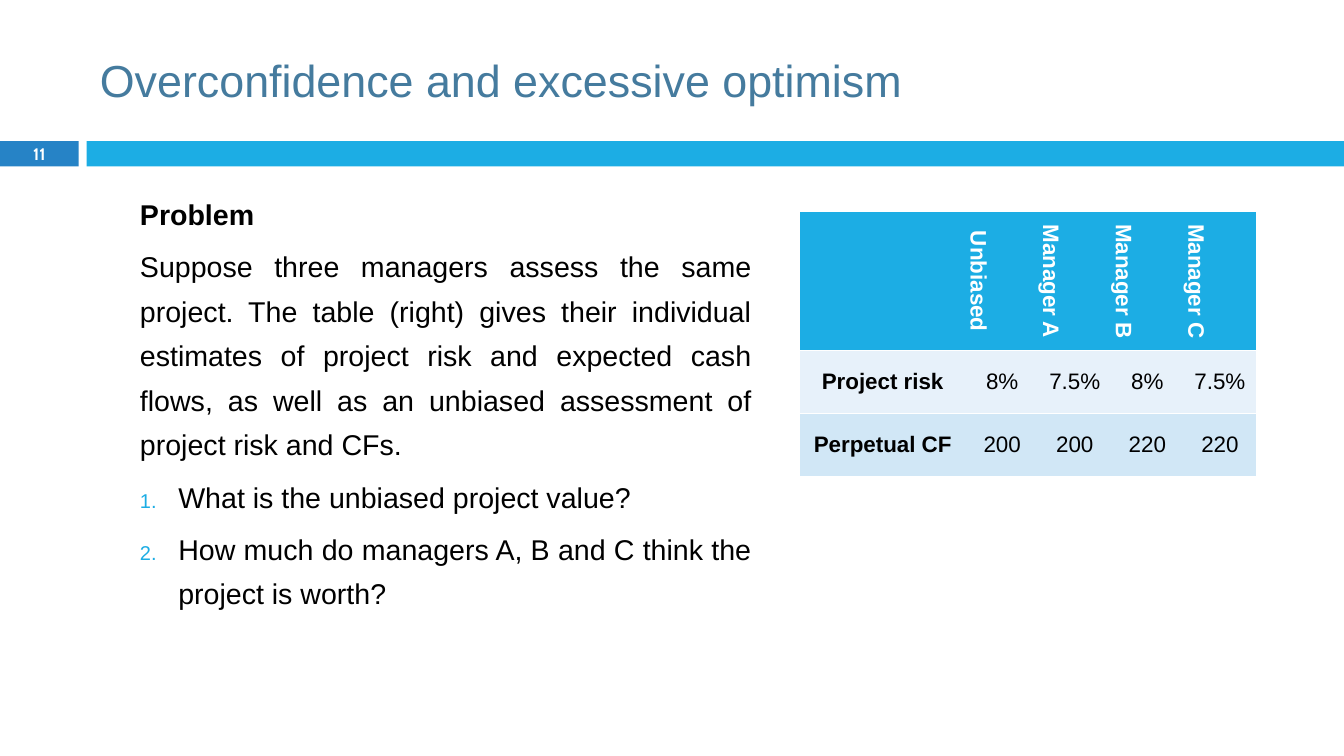
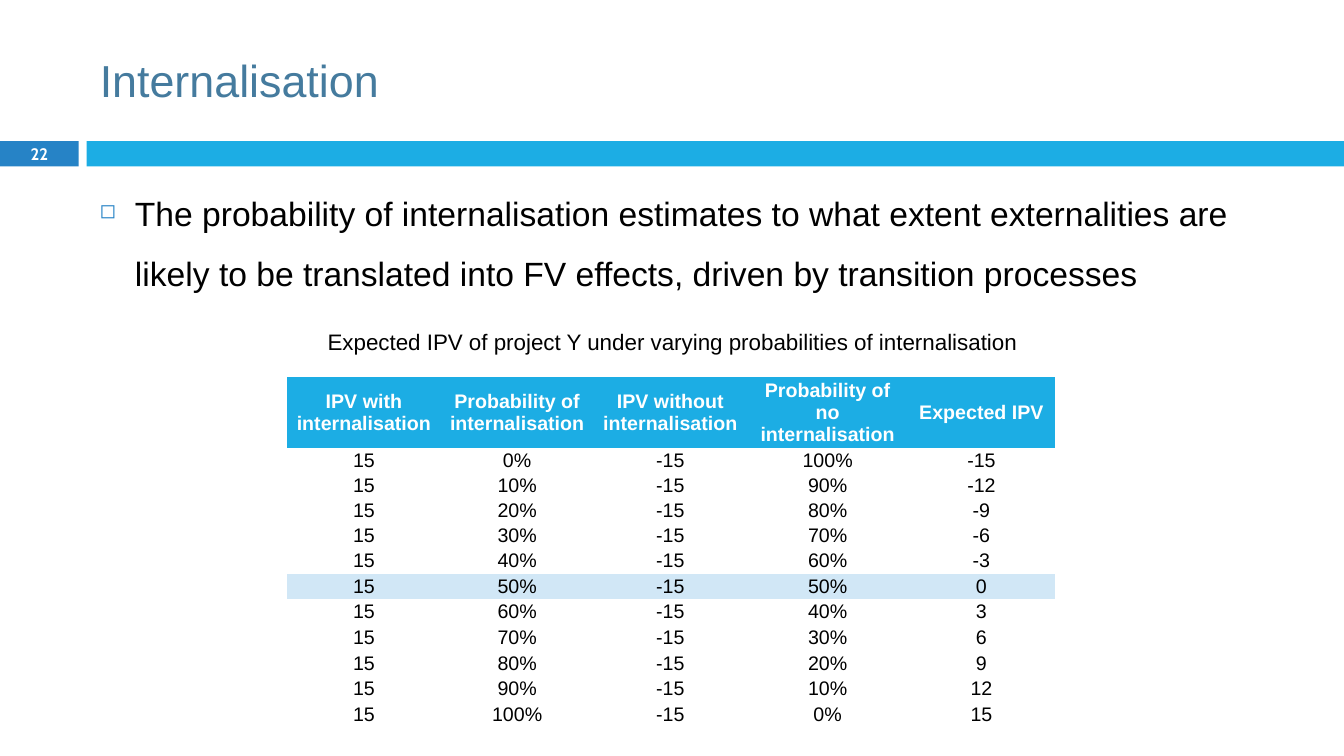
from pptx import Presentation
from pptx.dml.color import RGBColor
from pptx.enum.shapes import MSO_SHAPE
from pptx.enum.text import MSO_ANCHOR, MSO_AUTO_SIZE, PP_ALIGN
from pptx.oxml.ns import qn
from pptx.util import Pt
from lxml.etree import SubElement, Element

PX = 9144
SLIDE_W, SLIDE_H = 1333, 750
NUMBER_W, BAND_X, BAND_Y, BAND_H = 78, 86, 140, 25
TITLE_BOX = (89, 25, 1189, 108)
NO_STYLE = "{2D5ABB26-0587-4C30-8999-92F81FD0307C}"
COLORS = {
    "title": "457B9E", "text": "000000", "white": "FFFFFF",
    "number": "2683C6", "band": "1CADE4", "pale": "E7F1FA", "light": "D1E7F6",
}
LEFT, CENTER, JUSTIFY = PP_ALIGN.LEFT, PP_ALIGN.CENTER, PP_ALIGN.JUSTIFY

PROBLEM = [
    ("Problem", LEFT, True, False),
    ("Suppose three managers assess the same project. The table (right) gives their "
     "individual estimates of project risk and expected cash flows, as well as an "
     "unbiased assessment of project risk and CFs.", JUSTIFY, False, False),
    ("What is the unbiased project value?", JUSTIFY, False, True),
    ("How much do managers A, B and C think the project is worth?", JUSTIFY, False, True),
]
ESTIMATES = [
    ("", "Unbiased", "Manager A", "Manager B", "Manager C"),
    ("Project risk", "8%", "7.5%", "8%", "7.5%"),
    ("Perpetual CF", "200", "200", "220", "220"),
]
INTERNALISATION = (
    "The probability of internalisation estimates to what extent externalities are "
    "likely to be translated into FV effects, driven by transition processes"
)
CAPTION = "Expected IPV of project Y under varying probabilities of internalisation"
IPV_HEADER = (
    "IPV with internalisation", "Probability of internalisation",
    "IPV without internalisation", "Probability of no internalisation", "Expected IPV",
)
IPV_WITH, IPV_WITHOUT = 15, -15
IPV_ROWS = [
    (str(IPV_WITH), f"{chance}%", str(IPV_WITHOUT), f"{100 - chance}%",
     str((IPV_WITH * chance + IPV_WITHOUT * (100 - chance)) // 100))
    for chance in range(0, 101, 10)
]


def px(*lengths):
    return [length * PX for length in lengths]


def rgb(name):
    return RGBColor.from_string(COLORS[name])


def write(paragraph, text, size, color="text", bold=False, align=LEFT, font="Arial"):
    paragraph.alignment = align
    run = paragraph.add_run()
    run.text = text
    run.font.name, run.font.size, run.font.bold = font, Pt(size), bold
    run.font.color.rgb = rgb(color)


def space(paragraph, before, after=0, line=None):
    paragraph.space_before, paragraph.space_after = Pt(before), Pt(after)
    if line:
        paragraph.line_spacing = line


def indent(paragraph, margin, first=0):
    props = paragraph._p.get_or_add_pPr()
    props.set("marL", str(margin * PX))
    props.set("indent", str(first * PX))
    return props


def add_bullet(props, color, percent, tag, **marker):
    SubElement(SubElement(props, qn("a:buClr")), qn("a:srgbClr"), val=COLORS[color])
    SubElement(props, qn("a:buSzPct"), val=str(percent * 1000))
    SubElement(props, qn(tag), **marker)


def add_text_box(slide, box, anchor=MSO_ANCHOR.TOP):
    frame = slide.shapes.add_textbox(*px(*box)).text_frame
    frame.word_wrap, frame.vertical_anchor = True, anchor
    return frame


def add_band(slide, left, width, color):
    band = slide.shapes.add_shape(MSO_SHAPE.RECTANGLE, *px(left, BAND_Y, width, BAND_H))
    band.shadow.inherit = False
    band.fill.solid()
    band.fill.fore_color.rgb = rgb(color)
    band.line.fill.background()
    return band


def start_slide(deck, title, number):
    slide = deck.slides.add_slide(deck.slide_layouts[5])
    number_band = add_band(slide, 0, NUMBER_W, "number")
    add_band(slide, BAND_X, SLIDE_W - BAND_X, "band")
    frame = number_band.text_frame
    frame.vertical_anchor = MSO_ANCHOR.MIDDLE
    frame.margin_top = frame.margin_bottom = 0
    write(frame.paragraphs[0], number, 11.9, "white", True, CENTER, "Cabin")
    heading = slide.shapes.title
    heading.left, heading.top, heading.width, heading.height = px(*TITLE_BOX)
    heading.text_frame.vertical_anchor = MSO_ANCHOR.MIDDLE
    heading.text_frame.auto_size = MSO_AUTO_SIZE.NONE
    write(heading.text_frame.paragraphs[0], title, 32, "title")
    return slide


def add_grid(slide, left, top, columns, heights, rows, fills, size, margin,
             header_space=2, bold_labels=False):
    frame = slide.shapes.add_table(
        len(rows), len(columns), *px(left, top, sum(columns), sum(heights)))
    table = frame.table
    table._tbl.tblPr.find(qn("a:tableStyleId")).text = NO_STYLE
    table.horz_banding = False
    for column, width in zip(table.columns, columns):
        column.width = width * PX
    for r, (row, height) in enumerate(zip(rows, heights)):
        table.rows[r].height = height * PX
        for c, text in enumerate(row):
            cell = table.cell(r, c)
            cell.fill.solid()
            cell.fill.fore_color.rgb = rgb(fills[r])
            cell.vertical_anchor = MSO_ANCHOR.MIDDLE
            cell.margin_left = cell.margin_right = margin * PX
            cell.margin_top = cell.margin_bottom = 0
            if text:
                paragraph = cell.text_frame.paragraphs[0]
                gap = 2 if r else header_space
                space(paragraph, gap, gap)
                write(paragraph, text, size, "text" if r else "white",
                      r == 0 or (bold_labels and c == 0), CENTER)
    return table


def rule_above(cell):
    line = Element(qn("a:lnT"), w=str(Pt(1)))
    SubElement(SubElement(line, qn("a:solidFill")), qn("a:srgbClr"), val=COLORS["white"])
    cell._tc.get_or_add_tcPr().insert(0, line)


def build_overconfidence(deck):
    slide = start_slide(deck, "Overconfidence and excessive optimism", "11")
    body = add_text_box(slide, (89, 180, 666, 447))
    for i, (text, align, bold, numbered) in enumerate(PROBLEM):
        paragraph = body.add_paragraph() if i else body.paragraphs[0]
        space(paragraph, 5.5, line=1.3)
        props = indent(paragraph, 78, -38) if numbered else indent(paragraph, 40)
        if numbered:
            add_bullet(props, "band", 70, "a:buAutoNum", type="arabicPeriod")
        write(paragraph, text, 20.4, bold=bold, align=align)
    table = add_grid(slide, 793, 210, [165] + [72] * 4, [138, 62, 62], ESTIMATES,
                     ["band", "pale", "light"], 16, 7, bold_labels=True)
    for c in range(len(ESTIMATES[0])):
        rule_above(table.cell(1, c))
        if c:
            table.cell(0, c)._tc.get_or_add_tcPr().set("vert", "vert")


def build_internalisation(deck):
    slide = start_slide(deck, "Internalisation", "22")
    paragraph = add_text_box(slide, (89, 166, 1152, 539)).paragraphs[0]
    space(paragraph, 7, line=1.5)
    add_bullet(indent(paragraph, 35, -35), "number", 60, "a:buChar", char="◻")
    write(paragraph, INTERNALISATION, 24)
    fills = ["band"] + ["light" if row[1] == "50%" else "white" for row in IPV_ROWS]
    add_grid(slide, 285, 374, [152, 152, 152, 160, 145], [55] + [25] * 7 + [27] + [25] * 3,
             [IPV_HEADER] + IPV_ROWS, fills, 14, 5, header_space=3)
    caption = add_text_box(slide, (308, 321, 718, 37))
    write(caption.paragraphs[0], CAPTION, 16, align=CENTER)


def main():
    deck = Presentation()
    deck.slide_width, deck.slide_height = px(SLIDE_W, SLIDE_H)
    build_overconfidence(deck)
    build_internalisation(deck)
    deck.save("out.pptx")


if __name__ == "__main__":
    main()
